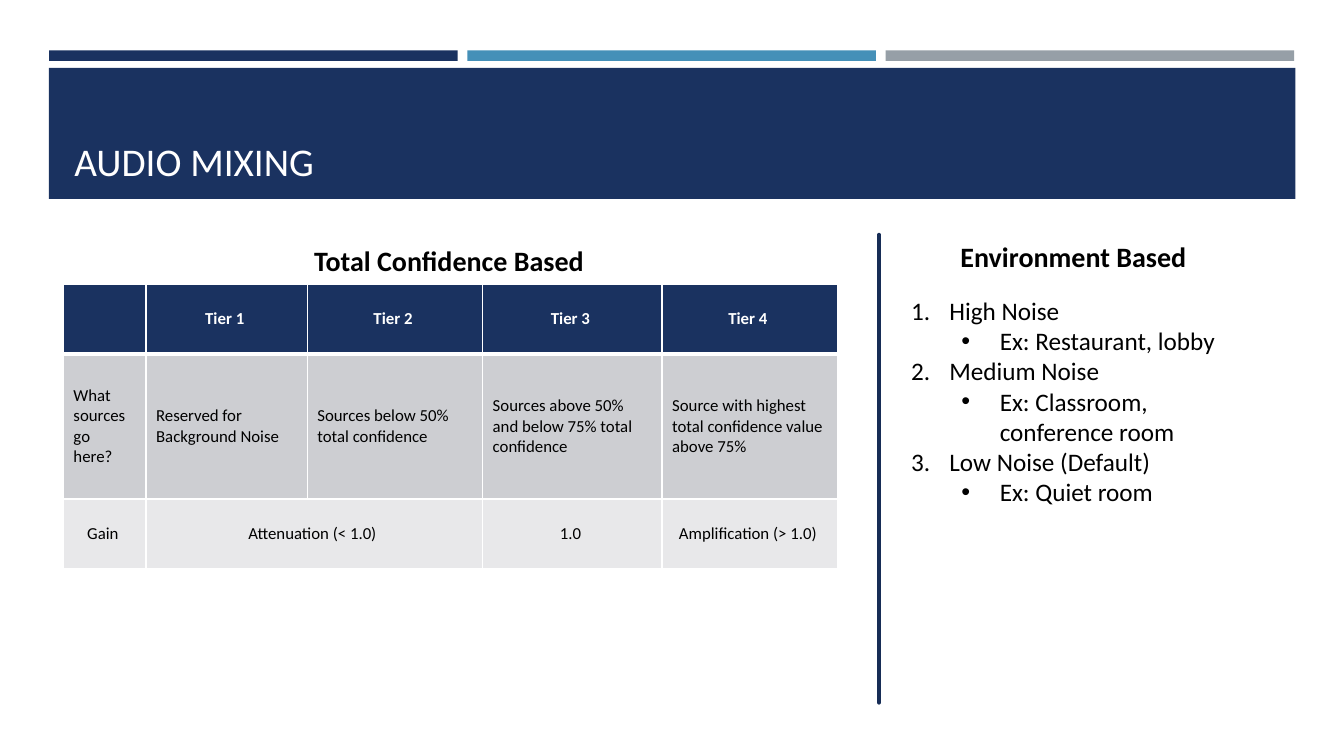
"""Build the audio mixing slide: a tier table beside a list of environments."""
from dataclasses import dataclass

from lxml import etree
from pptx import Presentation
from pptx.dml.color import RGBColor
from pptx.enum.shapes import MSO_CONNECTOR, MSO_SHAPE
from pptx.enum.text import MSO_ANCHOR, PP_ALIGN
from pptx.oxml.ns import qn
from pptx.slide import Slide
from pptx.table import _Cell
from pptx.text.text import _Paragraph
from pptx.util import Emu, Inches, Pt

RECTANGLE = MSO_SHAPE.RECTANGLE
STRAIGHT = MSO_CONNECTOR.STRAIGHT
LEFT, CENTER = PP_ALIGN.LEFT, PP_ALIGN.CENTER
TOP, MIDDLE, BOTTOM = MSO_ANCHOR.TOP, MSO_ANCHOR.MIDDLE, MSO_ANCHOR.BOTTOM

SLIDE_WIDTH, SLIDE_HEIGHT = Inches(13.333), Inches(7.5)
FONT = "Calibri"
COLORS = {
    "navy": "1A3260",
    "blue": "4590B8",
    "gray": "969FA7",
    "divider": "172D56",
    "body_row": "CDCED2",
    "gain_row": "E8E8EA",
    "white": "FFFFFF",
    "black": "000000",
}
HARD_SPACE = chr(160)


@dataclass(frozen=True)
class Box:
    """A rectangle in percent of the slide's width and height."""
    left: float
    top: float
    width: float
    height: float


@dataclass(frozen=True)
class Label:
    """A single line of text and its style."""
    text: str
    box: Box
    size: int
    color: str = "black"
    bold: bool = False
    align: PP_ALIGN = LEFT
    anchor: MSO_ANCHOR = TOP


@dataclass(frozen=True)
class TableRow:
    """A table row with its height in percent of the slide's height."""
    texts: tuple[str, ...]
    height: float
    fill: str
    align: PP_ALIGN = CENTER
    color: str = "black"
    bold: bool = False
    top_border: int = 1
    bottom_border: int = 1


@dataclass(frozen=True)
class Environment:
    """A noise level and an example of it."""
    level: str
    example: str


BAR_COLORS = ("navy", "blue", "gray")
BAR_BOX = Box(3.65, 6.67, 30.4, 1.4)
BAR_PITCH = 31.12
BANNER_BOX = Box(3.63, 8.97, 92.75, 17.33)

LABELS = (
    Label("AUDIO MIXING", Box(4.8, 10.27, 90.45, 14.8), 28, "white", anchor=BOTTOM),
    Label("Environment Based", Box(70.72, 31.07, 22.8, 5.87), 20, bold=True),
    Label("Total Confidence Based", Box(18.82, 31.6, 29.18, 5.87), 20, bold=True, align=CENTER),
)

TABLE_BOX = Box(4.72, 37.6, 57.6, 37.6)
COLUMN_WIDTHS = (6.15, 12, 13.05, 13.35, 13.05)
TABLE_ROWS = (
    TableRow(("", "Tier 1", "Tier 2", "Tier 3", "Tier 4"), 9.2, "navy",
             color="white", bold=True, bottom_border=3),
    TableRow(("What sources go here?", "Reserved for Background Noise",
              "Sources below 50% total confidence",
              "Sources above 50% and below 75% total confidence",
              "Source with highest total confidence value above 75%"),
             19.2, "body_row", LEFT, top_border=3),
    TableRow(("Gain", "Attenuation (< 1.0)", "", "1.0", "Amplification (> 1.0)"), 9.2, "gain_row"),
)

LIST_BOX = Box(67.05, 38.4, 27.67, 29.6)
ENVIRONMENTS = (
    Environment("High Noise", "Ex: Restaurant, lobby"),
    Environment("Medium Noise", "Ex: Classroom, conference room"),
    Environment("Low Noise (Default)", "Ex: Quiet room"),
)
DIVIDER_X, DIVIDER_TOP, DIVIDER_BOTTOM = 65.4, 31.07, 92.93


def across(percent: float) -> Emu:
    """Turn a percentage of the slide's width into a length."""
    return Emu(round(SLIDE_WIDTH * percent / 100))


def down(percent: float) -> Emu:
    """Turn a percentage of the slide's height into a length."""
    return Emu(round(SLIDE_HEIGHT * percent / 100))


def place(box: Box) -> tuple[Emu, Emu, Emu, Emu]:
    """Return left, top, width and height of a box as lengths."""
    return across(box.left), down(box.top), across(box.width), down(box.height)


def rgb(name: str) -> RGBColor:
    """Look up a colour by name."""
    return RGBColor.from_string(COLORS[name])


def style(paragraph: _Paragraph, size: int, color: str, bold: bool, align: PP_ALIGN) -> None:
    """Set the font and alignment of a paragraph."""
    paragraph.alignment = align
    paragraph.font.name = FONT
    paragraph.font.size = Pt(size)
    paragraph.font.bold = bold
    paragraph.font.color.rgb = rgb(color)


def draw_rectangle(slide: Slide, box: Box, color: str) -> None:
    """Draw a plain filled rectangle."""
    shape = slide.shapes.add_shape(RECTANGLE, *place(box))
    shape.shadow.inherit = False
    shape.fill.solid()
    shape.fill.fore_color.rgb = rgb(color)
    shape.line.fill.background()


def draw_label(slide: Slide, label: Label) -> None:
    """Draw a line of text."""
    frame = slide.shapes.add_textbox(*place(label.box)).text_frame
    frame.word_wrap = True
    frame.vertical_anchor = label.anchor
    paragraph = frame.paragraphs[0]
    paragraph.text = label.text
    style(paragraph, label.size, label.color, label.bold, label.align)


def add_borders(cell: _Cell, row: TableRow) -> None:
    """Give a cell white borders."""
    properties = cell._tc.get_or_add_tcPr()
    widths = {"lnL": 1, "lnR": 1, "lnT": row.top_border, "lnB": row.bottom_border}
    for tag, width in widths.items():
        line = etree.SubElement(properties, qn(f"a:{tag}"), w=str(Pt(width)))
        fill = etree.SubElement(line, qn("a:solidFill"))
        etree.SubElement(fill, qn("a:srgbClr"), val=COLORS["white"])


def draw_table(slide: Slide) -> None:
    """Draw the tier table."""
    frame = slide.shapes.add_table(len(TABLE_ROWS), len(COLUMN_WIDTHS), *place(TABLE_BOX))
    table = frame.table
    for column, width in zip(table.columns, COLUMN_WIDTHS):
        column.width = across(width)
    for row_index, row in enumerate(TABLE_ROWS):
        table.rows[row_index].height = down(row.height)
        for column_index, text in enumerate(row.texts):
            cell = table.cell(row_index, column_index)
            add_borders(cell, row)
            cell.fill.solid()
            cell.fill.fore_color.rgb = rgb(row.fill)
            cell.vertical_anchor = MIDDLE
            paragraph = cell.text_frame.paragraphs[0]
            paragraph.text = text + HARD_SPACE if text else ""
            style(paragraph, 12, row.color, row.bold, row.align)
    table.cell(2, 1).merge(table.cell(2, 2))


def add_marker(paragraph: _Paragraph, level: int) -> None:
    """Number a first-level paragraph or bullet a second-level one."""
    paragraph.level = level
    properties = paragraph._p.get_or_add_pPr()
    properties.set("marL", str(Inches(0.38 + 0.5 * level)))
    properties.set("indent", str(-Inches(0.38)))
    font = etree.Element(qn("a:buFont"), typeface="Arial" if level else FONT)
    marker = (etree.Element(qn("a:buChar"), char="•") if level
              else etree.Element(qn("a:buAutoNum"), type="arabicPeriod"))
    properties.insert(0, font)
    properties.insert(1, marker)


def draw_environments(slide: Slide) -> None:
    """Draw the numbered list of environments."""
    frame = slide.shapes.add_textbox(*place(LIST_BOX)).text_frame
    frame.word_wrap = True
    lines = [line for item in ENVIRONMENTS for line in (item.level, item.example)]
    for index, line in enumerate(lines):
        paragraph = frame.add_paragraph() if index else frame.paragraphs[0]
        paragraph.text = line
        style(paragraph, 18, "black", False, LEFT)
        add_marker(paragraph, index % 2)


def draw_divider(slide: Slide) -> None:
    """Draw the vertical line between both halves."""
    x = across(DIVIDER_X)
    divider = slide.shapes.add_connector(STRAIGHT, x, down(DIVIDER_TOP), x, down(DIVIDER_BOTTOM))
    divider.line.color.rgb = rgb("divider")
    divider.line.width = Pt(3)
    divider.line._get_or_add_ln().set("cap", "rnd")
    etree.SubElement(divider._element.spPr, qn("a:effectLst"))


def main() -> None:
    """Build and save the slide."""
    presentation = Presentation()
    presentation.slide_width, presentation.slide_height = SLIDE_WIDTH, SLIDE_HEIGHT
    slide = presentation.slides.add_slide(presentation.slide_layouts[6])
    for index, color in enumerate(BAR_COLORS):
        left = BAR_BOX.left + index * BAR_PITCH
        draw_rectangle(slide, Box(left, BAR_BOX.top, BAR_BOX.width, BAR_BOX.height), color)
    draw_rectangle(slide, BANNER_BOX, "navy")
    for label in LABELS:
        draw_label(slide, label)
    draw_table(slide)
    draw_environments(slide)
    draw_divider(slide)
    presentation.save("out.pptx")


if __name__ == "__main__":
    main()
